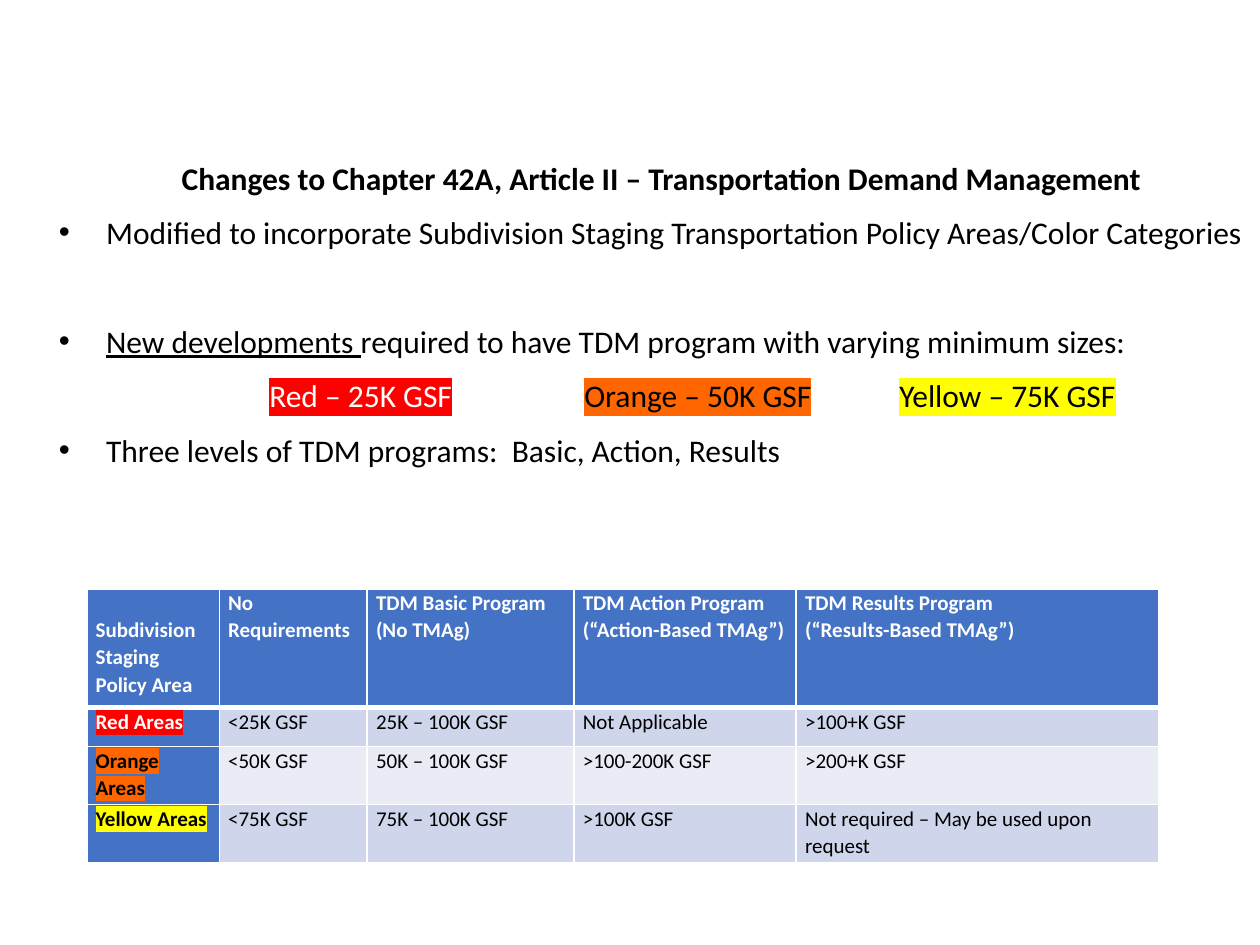
"""Build the slide on changes to the transportation demand management rules."""
import dataclasses
import typing

import lxml.etree
import pptx
import pptx.dml.color
import pptx.enum.text
import pptx.oxml.ns
import pptx.util

Cm = pptx.util.Cm
Pt = pptx.util.Pt
qn = pptx.oxml.ns.qn
Align = pptx.enum.text.PP_ALIGN
HUES = {
    "black": "000000", "white": "FFFFFF", "red": "FF0000", "orange": "FF6600",
    "yellow": "FFFF00", "head": "4472C4", "odd": "CFD5EA", "even": "E9EBF5",
}
INKS = {"red": "white", "orange": "black", "yellow": "black"}


@dataclasses.dataclass
class Run:
    text: str
    hue: str = "black"
    mark: str = ""
    bold: bool = False
    under: bool = False


@dataclasses.dataclass
class Para:
    runs: list[Run]
    align: Align = Align.LEFT
    bullet: bool = False
    tabs: tuple = ()
    gap: float = 0


@dataclasses.dataclass
class Area:
    mark: str
    least: str
    name: str
    cells: list[str]


AREAS = [
    Area("red", "25K", "Red", ["25K – 100K GSF", "Not Applicable", ">100+K GSF"]),
    Area("orange", "50K", "Orange", ["50K – 100K GSF", ">100-200K GSF", ">200+K GSF"]),
    Area("yellow", "75K", "Yellow", ["75K – 100K GSF", ">100K GSF",
                                     "Not required – May be used upon request"]),
]
HEADS = [
    "Subdivision Staging Policy Area", "No Requirements",
    "TDM Basic Program (No TMAg)", "TDM Action Program (“Action-Based TMAg”)",
    "TDM Results Program\n(“Results-Based TMAg”)",
]
WIDTHS = [2.67, 2.98, 4.17, 4.48, 7.3]
HEIGHTS = [2.39, 0.79, 1.17, 1.17]


def apply(item: typing.Any, values: dict) -> None:
    """Set each named value on the item."""
    for name, value in values.items():
        setattr(item, name, value)


def add_node(root: typing.Any, tag: str, **values: str) -> typing.Any:
    """Add a child element with its attributes."""
    return lxml.etree.SubElement(root, qn(tag), values)


def add_run(para: typing.Any, run: Run, size: int) -> None:
    """Add one formatted run."""
    item = para.add_run()
    item.text = run.text
    apply(item.font, {"name": "Calibri", "size": Pt(size), "bold": run.bold,
                      "underline": run.under})
    item.font.color.rgb = pptx.dml.color.RGBColor.from_string(HUES[run.hue])
    if run.mark:
        props = item.font._element
        node = add_node(props, "a:highlight")
        add_node(node, "a:srgbClr", val=HUES[run.mark])
        props.find(qn("a:solidFill")).addnext(node)


def fill_text(frame: typing.Any, paras: list[Para], size: int, after: float) -> None:
    """Write paragraphs into a text frame."""
    for index, para in enumerate(paras):
        item = frame.add_paragraph() if index else frame.paragraphs[0]
        apply(item, {"alignment": para.align, "line_spacing": 1.07,
                     "space_before": Pt(para.gap), "space_after": Pt(after)})
        props = item._p.get_or_add_pPr()
        if para.bullet:
            props.set("marL", str(Cm(0.95)))
            props.set("indent", str(Cm(-0.95)))
            add_node(props, "a:buFont", typeface="Arial")
            add_node(props, "a:buChar", char="•")
        if para.tabs:
            stops = add_node(props, "a:tabLst")
            for stop in para.tabs:
                add_node(stops, "a:tab", pos=str(Cm(stop)), algn="l")
        for run in para.runs:
            add_run(item, run, size)


def add_edges(cell: typing.Any, top: int, base: int) -> None:
    """Draw the white borders of a cell."""
    props = cell._tc.get_or_add_tcPr()
    edges = {"a:lnL": 1, "a:lnR": 1, "a:lnT": top, "a:lnB": base}
    for index, (tag, width) in enumerate(edges.items()):
        line = add_node(props, tag, w=str(Pt(width)))
        add_node(add_node(line, "a:solidFill"), "a:srgbClr", val=HUES["white"])
        props.insert(index, line)


def fill_cell(cell: typing.Any, runs: list[Run], fill: str, row: int) -> None:
    """Format a cell and write one paragraph for each run."""
    apply(cell, {"margin_left": Cm(0.18), "margin_right": Cm(0.18),
                 "margin_top": 0, "margin_bottom": 0})
    cell.fill.solid()
    cell.fill.fore_color.rgb = pptx.dml.color.RGBColor.from_string(HUES[fill])
    add_edges(cell, 3 if row == 1 else 1, 3 if row == 0 else 1)
    fill_text(cell.text_frame, [Para([run]) for run in runs], 12, 0)


def add_body(slide: typing.Any) -> None:
    """Add the title and the bullet list."""
    sizes = []
    for area in AREAS:
        sizes += [Run("\t"), Run(f"{area.name} – {area.least} GSF",
                                 INKS[area.mark], area.mark)]
    paras = [
        Para([Run("Changes to Chapter 42A, Article II – Transportation Demand Management",
                  bold=True)], Align.CENTER),
        Para([Run("Modified to incorporate Subdivision Staging Transportation "
                  "Policy Areas/Color Categories")], Align.JUSTIFY, True),
        Para([Run("New developments ", under=True),
              Run("required to have TDM program with varying minimum sizes:")],
             Align.JUSTIFY, True, gap=31),
        Para(sizes, tabs=tuple(4.24 + 6.35 * step for step in range(len(AREAS)))),
        Para([Run("Three levels of TDM programs:  Basic, Action, Results")],
             Align.JUSTIFY, True),
    ]
    frame = slide.shapes.add_textbox(Cm(0.94), Cm(3.02), Cm(24.8), Cm(9.9)).text_frame
    frame.word_wrap = True
    fill_text(frame, paras, 18, 8)


def add_grid(slide: typing.Any) -> None:
    """Add the table of programs by policy area."""
    table = slide.shapes.add_table(
        len(HEIGHTS), len(WIDTHS), Cm(1.75), Cm(11.87),
        Cm(sum(WIDTHS)), Cm(sum(HEIGHTS))).table
    table.first_col = True
    for column, width in zip(table.columns, WIDTHS):
        column.width = Cm(width)
    for line, height in zip(table.rows, HEIGHTS):
        line.height = Cm(height)
    for col, head in enumerate(HEADS):
        runs = [Run(text, "white", bold=True) for text in head.split("\n")]
        fill_cell(table.cell(0, col), runs, "head", 0)
    table.cell(0, 0).margin_top = Cm(0.54)
    for row, area in enumerate(AREAS, 1):
        label = Run(f"{area.name} Areas", INKS[area.mark], area.mark, True)
        fill_cell(table.cell(row, 0), [label], "head", row)
        for col, text in enumerate([f"<{area.least} GSF", *area.cells], 1):
            fill_cell(table.cell(row, col), [Run(text)], "odd" if row % 2 else "even", row)


def main() -> None:
    """Build and save the deck."""
    deck = pptx.Presentation()
    apply(deck, {"slide_width": Cm(25.4), "slide_height": Cm(19.05)})
    slide = deck.slides.add_slide(deck.slide_layouts[6])
    add_body(slide)
    add_grid(slide)
    deck.save("out.pptx")


if __name__ == "__main__":
    main()
